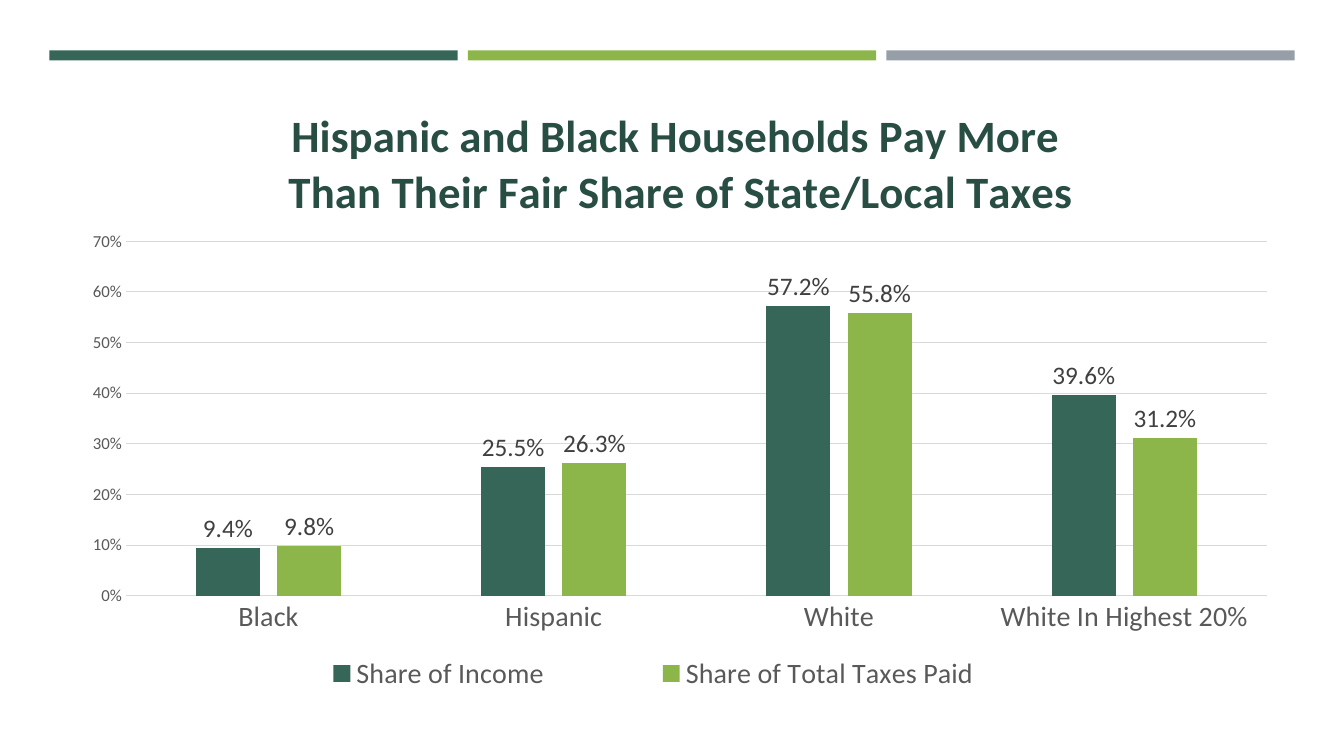
from dataclasses import dataclass

from lxml.etree import SubElement
from pptx import Presentation
from pptx.chart.data import CategoryChartData
from pptx.dml.color import RGBColor as RGB
from pptx.enum.chart import (
    XL_CHART_TYPE as ChartType,
    XL_LABEL_POSITION as LabelPos,
    XL_LEGEND_POSITION as LegendPos,
    XL_TICK_MARK as Tick,
)
from pptx.enum.shapes import MSO_SHAPE as Shape
from pptx.oxml.ns import qn
from pptx.util import Pt

PX = 9144


@dataclass(frozen=True)
class Theme:
    """Colours, font and type sizes of the slide."""
    font: str = "Calibri"
    green: str = "366658"
    lime: str = "8CB64A"
    slate: str = "969FA7"
    title: str = "284D42"
    text: str = "595959"
    label: str = "404040"
    rule: str = "D9D9D9"
    title_size: int = 32
    category_size: int = 20
    label_size: int = 18
    tick_size: int = 12


THEME = Theme()
CATEGORIES = ["Black", "Hispanic", "White", "White In Highest 20%"]
SERIES = [
    ("Share of Income", [0.094, 0.255, 0.572, 0.396], THEME.green),
    ("Share of Total Taxes Paid", [0.098, 0.263, 0.558, 0.312], THEME.lime),
]
TITLE = [
    "Hispanic and Black Households Pay More ",
    "Than Their Fair Share of State/Local Taxes",
]


def px(*lengths):
    """Turn px lengths into EMU."""
    return [n * PX for n in lengths]


def style_font(font, size, color, bold=False):
    """Format a font object."""
    font.name = THEME.font
    font.size = Pt(size)
    font.bold = bold
    font.color.rgb = RGB.from_string(color)


def add_text(p, text, **fmt):
    """Add a formatted run to a paragraph."""
    r = p.add_run()
    r.text = text
    style_font(r.font, **fmt)


def style_rule(line):
    """Format a thin grey chart line."""
    line.color.rgb = RGB.from_string(THEME.rule)
    line.width = Pt(0.75)


def set_layout(parent, index, inner=False, **fractions):
    """Place a chart part by fractions of the chart area."""
    for old in parent.findall(qn("c:layout")):
        parent.remove(old)
    layout = SubElement(parent, qn("c:layout"))
    parent.insert(index, layout)
    manual = SubElement(layout, qn("c:manualLayout"))
    settings = {"layoutTarget": "inner"} if inner else {}
    settings |= {"xMode": "edge", "yMode": "edge"}
    settings |= fractions
    for tag, value in settings.items():
        SubElement(manual, qn(f"c:{tag}")).set("val", str(value))


def add_bands(slide, left, top, width, height, gap=10):
    """Draw the row of equal coloured bands."""
    colors = (THEME.green, THEME.lime, THEME.slate)
    band = (width - gap * (len(colors) - 1)) // len(colors)
    for i, color in enumerate(colors):
        box = px(left + i * (band + gap), top, band, height)
        sp = slide.shapes.add_shape(Shape.RECTANGLE, *box)
        sp.shadow.inherit = False
        sp.fill.solid()
        sp.fill.fore_color.rgb = RGB.from_string(color)
        sp.line.fill.background()


def format_title(chart):
    """Write the two-line chart title."""
    chart.has_title = True
    title = chart.chart_title
    title.include_in_layout = False
    tf = title.text_frame
    for i, text in enumerate(TITLE):
        p = tf.add_paragraph() if i else tf.paragraphs[0]
        add_text(p, text, size=THEME.title_size, color=THEME.title, bold=True)


def format_axes(chart):
    """Format the category and value axes."""
    cat, val = chart.category_axis, chart.value_axis
    for axis, size in ((cat, THEME.category_size), (val, THEME.tick_size)):
        axis.major_tick_mark = axis.minor_tick_mark = Tick.NONE
        style_font(axis.tick_labels.font, size, THEME.text)
    style_rule(cat.format.line)
    val.format.line.fill.background()
    val.minimum_scale, val.maximum_scale, val.major_unit = 0, 0.7, 0.1
    val.tick_labels.number_format = "0%"
    val.tick_labels.number_format_is_linked = False
    style_rule(val.major_gridlines.format.line)


def format_series(plot):
    """Colour the columns and label their values."""
    plot.gap_width, plot.overlap = 219, -27
    plot.vary_by_categories = False
    for series, (_, _, color) in zip(plot.series, SERIES):
        series.format.fill.solid()
        series.format.fill.fore_color.rgb = RGB.from_string(color)
        labels = series.data_labels
        labels.show_value = True
        labels.position = LabelPos.OUTSIDE_END
        labels.number_format = "0.0%"
        labels.number_format_is_linked = False
        style_font(labels.font, THEME.label_size, THEME.label)


def format_legend(chart):
    """Show the legend below the plot."""
    chart.has_legend = True
    chart.legend.position = LegendPos.BOTTOM
    chart.legend.include_in_layout = False
    style_font(chart.legend.font, THEME.category_size, THEME.text)


def add_tax_chart(slide, left, top, width, height):
    """Add the column chart of income and tax shares."""
    data = CategoryChartData(number_format="0.0%")
    data.categories = CATEGORIES
    for name, values, _ in SERIES:
        data.add_series(name, values)
    box = px(left, top, width, height)
    frame = slide.shapes.add_chart(ChartType.COLUMN_CLUSTERED, *box, data)
    chart = frame.chart
    chart.font.name = THEME.font
    format_title(chart)
    format_axes(chart)
    format_series(chart.plots[0])
    format_legend(chart)
    root = chart.element if hasattr(chart, "element") else chart._chartSpace
    area = root.find(qn("c:chart"))
    set_layout(area.find(qn("c:title")), 1, x=0.18, y=0.04)
    set_layout(area.find(qn("c:plotArea")), 0, inner=True,
               x=0.05, y=0.26, w=0.93, h=0.57)
    set_layout(area.find(qn("c:legend")), 1, x=0.13, y=0.92, w=0.7, h=0.07)


def main():
    """Build and save the slide."""
    prs = Presentation()
    prs.slide_width, prs.slide_height = px(1333, 750)
    slide = prs.slides.add_slide(prs.slide_layouts[6])
    add_bands(slide, 49, 50, 1235, 10)
    add_tax_chart(slide, 64, 79, 1217, 617)
    prs.save("out.pptx")


if __name__ == "__main__":
    main()
